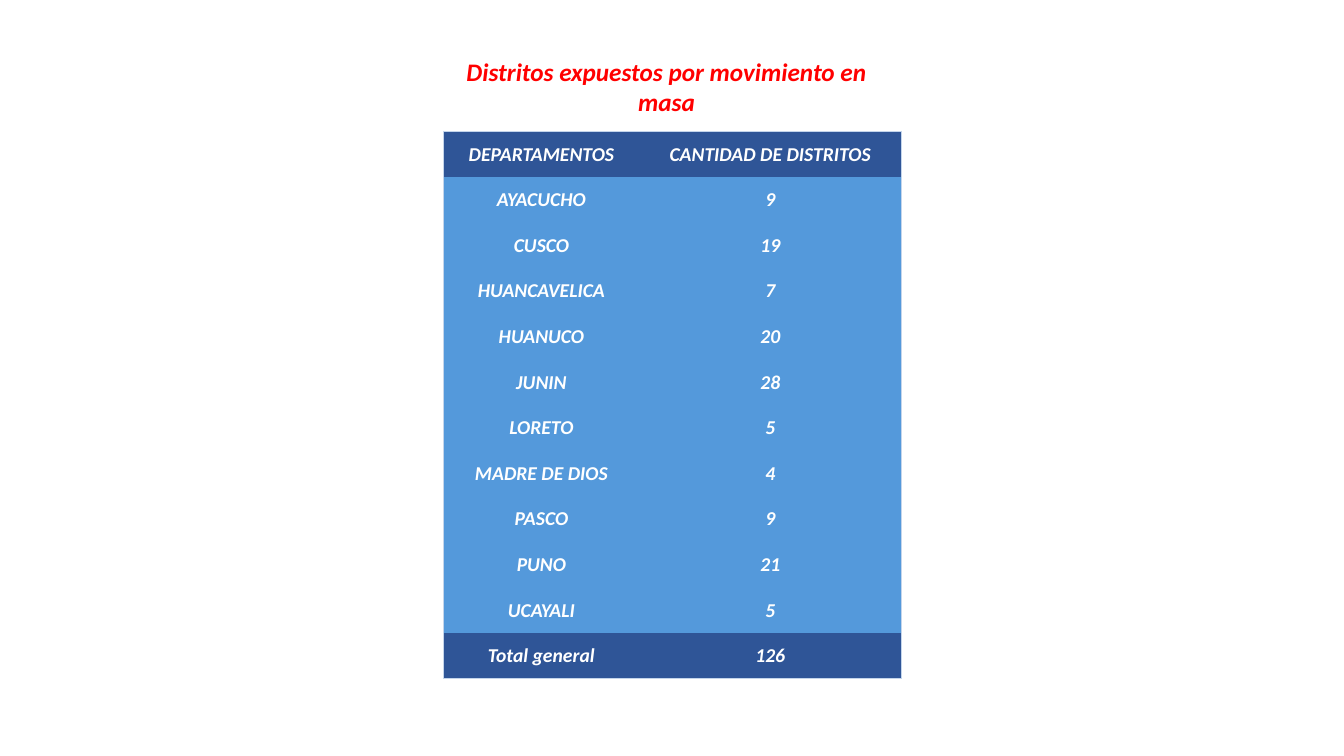
import pptx
import pptx.dml.color
import pptx.enum.text
import pptx.oxml
import pptx.oxml.ns
import pptx.util
from pptx.util import Inches

WHITE = "FFFFFF"
RED = "FF0000"
NAVY = "2F5597"
SKY = "5499DB"
PALE = "C4D5EB"

DISTRICTS = [
    ("DEPARTAMENTOS", "CANTIDAD DE DISTRITOS"),
    ("AYACUCHO", "9"),
    ("CUSCO", "19"),
    ("HUANCAVELICA", "7"),
    ("HUANUCO", "20"),
    ("JUNIN", "28"),
    ("LORETO", "5"),
    ("MADRE DE DIOS", "4"),
    ("PASCO", "9"),
    ("PUNO", "21"),
    ("UCAYALI", "5"),
    ("Total general", "126"),
]
COLUMN_WIDTHS = (1.94, 2.6)
TABLE_HEIGHT = 5.43


def rgb(value):
    return pptx.dml.color.RGBColor.from_string(value)


def write(frame, text, size, color):
    paragraph = frame.paragraphs[0]
    paragraph.alignment = pptx.enum.text.PP_ALIGN.CENTER
    paragraph.line_spacing = 1.0
    run = paragraph.add_run()
    run.text = text
    run.font.name = "Calibri"
    run.font.size = pptx.util.Pt(size)
    run.font.bold = True
    run.font.italic = True
    run.font.color.rgb = rgb(color)


def set_borders(cell, outer_sides):
    properties = cell._tc.get_or_add_tcPr()
    for side in "LRTB":
        if side in outer_sides:
            paint = f'<a:solidFill><a:srgbClr val="{PALE}"/></a:solidFill>'
        else:
            paint = "<a:noFill/>"
        properties.append(pptx.oxml.parse_xml(
            f'<a:ln{side} {pptx.oxml.ns.nsdecls("a")} w="{pptx.util.Pt(0.5)}">'
            f"{paint}</a:ln{side}>"
        ))


def fill_cell(cell, text, fill, outer_sides):
    cell.margin_left = cell.margin_right = cell.margin_top = Inches(0.01)
    cell.margin_bottom = 0
    cell.vertical_anchor = pptx.enum.text.MSO_ANCHOR.MIDDLE
    set_borders(cell, outer_sides)
    cell.fill.solid()
    cell.fill.fore_color.rgb = rgb(fill)
    write(cell.text_frame, text, 14, WHITE)


def add_title(slide, text):
    title = slide.shapes.title
    title.left, title.top = Inches(4.22), Inches(0.51)
    title.width, title.height = Inches(4.9), Inches(0.4)
    frame = title.text_frame
    frame.word_wrap = False
    frame.auto_size = pptx.enum.text.MSO_AUTO_SIZE.NONE
    frame.vertical_anchor = pptx.enum.text.MSO_ANCHOR.TOP
    frame.margin_left, frame.margin_right = Inches(0.1), Inches(0.22)
    frame.margin_top = frame.margin_bottom = Inches(0.05)
    write(frame, text, 18, RED)


def add_district_table(slide):
    last_row = len(DISTRICTS) - 1
    table = slide.shapes.add_table(
        len(DISTRICTS), len(COLUMN_WIDTHS), Inches(4.4), Inches(1.3),
        Inches(sum(COLUMN_WIDTHS)), Inches(TABLE_HEIGHT),
    ).table
    table.horz_banding = False
    for column, width in zip(table.columns, COLUMN_WIDTHS):
        column.width = Inches(width)
    for row, record in enumerate(DISTRICTS):
        table.rows[row].height = Inches(TABLE_HEIGHT / len(DISTRICTS))
        fill = NAVY if row in (0, last_row) else SKY
        edge = {0: "T", last_row: "B"}.get(row, "")
        for column, text in enumerate(record):
            fill_cell(table.cell(row, column), text, fill, "LR"[column] + edge)


def main():
    deck = pptx.Presentation()
    deck.slide_width, deck.slide_height = Inches(13.33), Inches(7.5)
    slide = deck.slides.add_slide(deck.slide_layouts.get_by_name("Title Only"))
    add_title(slide, "Distritos expuestos por movimiento en masa")
    add_district_table(slide)
    deck.save("out.pptx")


if __name__ == "__main__":
    main()
